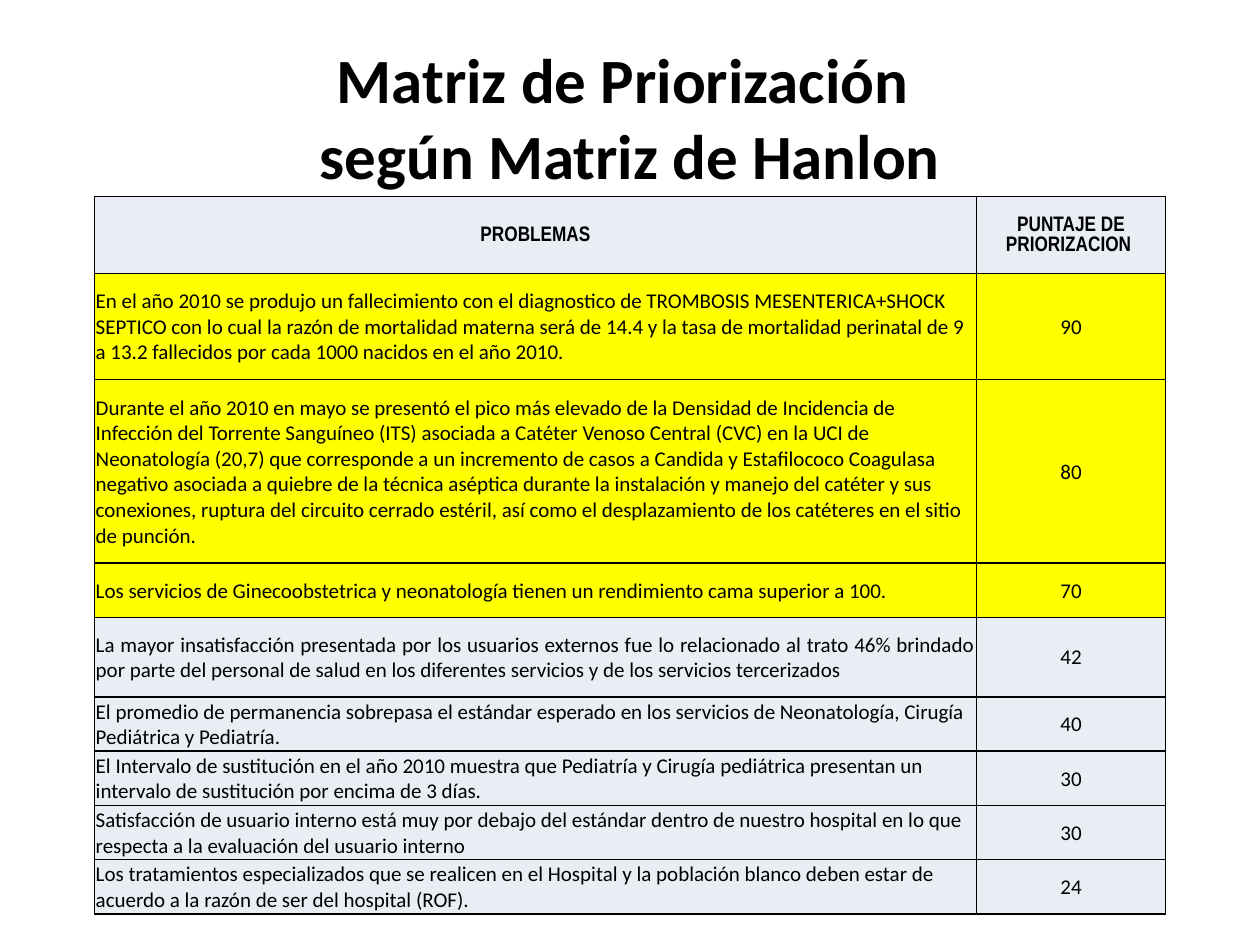
from lxml.etree import SubElement
from pptx import Presentation
from pptx.dml.color import RGBColor
from pptx.enum.text import MSO_ANCHOR, PP_ALIGN
from pptx.oxml.ns import qn
from pptx.util import Pt

PALE, GOLD = "E9EDF4", "FFFF00"
HEAD = ("PROBLEMAS", "PUNTAJE DE PRIORIZACION ")
ROWS = [
    ("En el año 2010 se produjo un fallecimiento con el diagnostico de TROMBOSIS "
     "MESENTERICA+SHOCK SEPTICO con lo cual la razón de mortalidad materna será de 14.4 "
     "y la tasa de mortalidad perinatal de 9 a 13.2 fallecidos por cada 1000 nacidos en "
     "el año 2010.", 90, 60.5),
    ("Durante el año 2010 en mayo se presentó el pico más elevado de la Densidad de "
     "Incidencia de Infección del Torrente Sanguíneo (ITS) asociada a Catéter Venoso "
     "Central (CVC) en la UCI de Neonatología (20,7) que corresponde a un incremento de "
     "casos a Candida y Estafilococo Coagulasa negativo asociada a quiebre de la técnica "
     "aséptica durante la instalación y manejo del catéter y sus conexiones, ruptura del "
     "circuito cerrado estéril, así como el desplazamiento de los catéteres en el sitio "
     "de punción.", 80, 105),
    ("Los servicios de Ginecoobstetrica y neonatología tienen un rendimiento cama "
     "superior a 100.", 70, 31),
    ("La mayor insatisfacción presentada por los usuarios externos fue lo relacionado al "
     "trato 46% brindado por parte del personal de salud en los diferentes servicios y de "
     "los servicios tercerizados", 42, 45.5),
    ("El promedio de permanencia sobrepasa el estándar esperado en los servicios de "
     "Neonatología, Cirugía Pediátrica y Pediatría.", 40, 31),
    ("El Intervalo de sustitución en el año 2010 muestra que Pediatría y Cirugía "
     "pediátrica presentan un intervalo de sustitución por encima de 3 días.", 30, 31),
    ("Satisfacción de usuario interno está muy por debajo del estándar dentro de nuestro "
     "hospital en lo que respecta a la evaluación del usuario interno", 30, 31),
    ("Los tratamientos especializados que se realicen en el Hospital y la población "
     "blanco deben estar de acuerdo a la razón de ser del hospital (ROF).", 24, 31),
]


def color(code):
    """Turn a hex string into a colour."""
    return RGBColor.from_string(code)


def style(para, size, face="Calibri", bold=False, align=PP_ALIGN.CENTER):
    """Set the look of a paragraph and its runs."""
    para.alignment = align
    for run in para.runs:
        font = run.font
        font.size, font.name, font.bold = Pt(size), face, bold
        font.color.rgb = color("000000")


def border(cell):
    """Draw a thin black line on every side of a cell."""
    props = cell._tc.get_or_add_tcPr()
    for index, side in enumerate(("a:lnL", "a:lnR", "a:lnT", "a:lnB")):
        line = SubElement(props, qn(side), w=str(Pt(1)))
        fill = SubElement(line, qn("a:solidFill"))
        SubElement(fill, qn("a:srgbClr"), val="000000")
        props.insert(index, line)


def fill_cell(cell, text, fill, **look):
    """Write and format one table cell."""
    cell.text_frame.text = text
    style(cell.text_frame.paragraphs[0], 12, **look)
    cell.margin_left = cell.margin_right = cell.margin_top = Pt(0.72)
    cell.margin_bottom = 0
    cell.vertical_anchor = MSO_ANCHOR.MIDDLE
    cell.fill.solid()
    cell.fill.fore_color.rgb = color(fill)
    border(cell)


def add_title(slide, left, top, width, height):
    """Place the two-line heading in its box."""
    frame = slide.shapes.add_textbox(Pt(left), Pt(top), Pt(width), Pt(height)).text_frame
    frame.word_wrap = True
    frame.vertical_anchor = MSO_ANCHOR.MIDDLE
    frame.text = "Matriz de Priorización \vsegún Matriz de Hanlon"
    style(frame.paragraphs[0], 36, bold=True)


def add_matrix(slide, left, top, width, height):
    """Place the table of problems and scores in its box."""
    table = slide.shapes.add_table(
        len(ROWS) + 1, 2, Pt(left), Pt(top), Pt(width), Pt(height)).table
    score = 108
    table.columns[0].width, table.columns[1].width = Pt(width - score), Pt(score)
    table.rows[0].height = Pt(height - sum(row[2] for row in ROWS))
    for col, text in enumerate(HEAD):
        fill_cell(table.cell(0, col), text, PALE, face="Arial Narrow", bold=True)
    for index, (text, points, tall) in enumerate(ROWS, 1):
        table.rows[index].height = Pt(tall)
        fill = GOLD if points >= 70 else PALE
        align = PP_ALIGN.JUSTIFY if points == 42 else PP_ALIGN.LEFT
        fill_cell(table.cell(index, 0), text, fill, align=align)
        fill_cell(table.cell(index, 1), str(points), fill)


def main():
    """Build and save the slide."""
    deck = Presentation()
    deck.slide_width, deck.slide_height = Pt(720), Pt(540)
    slide = deck.slides.add_slide(deck.slide_layouts[6])
    add_title(slide, 36, 21.6, 648, 90)
    add_matrix(slide, 54, 112.3, 612, 410)
    deck.save("out.pptx")


if __name__ == "__main__":
    main()
